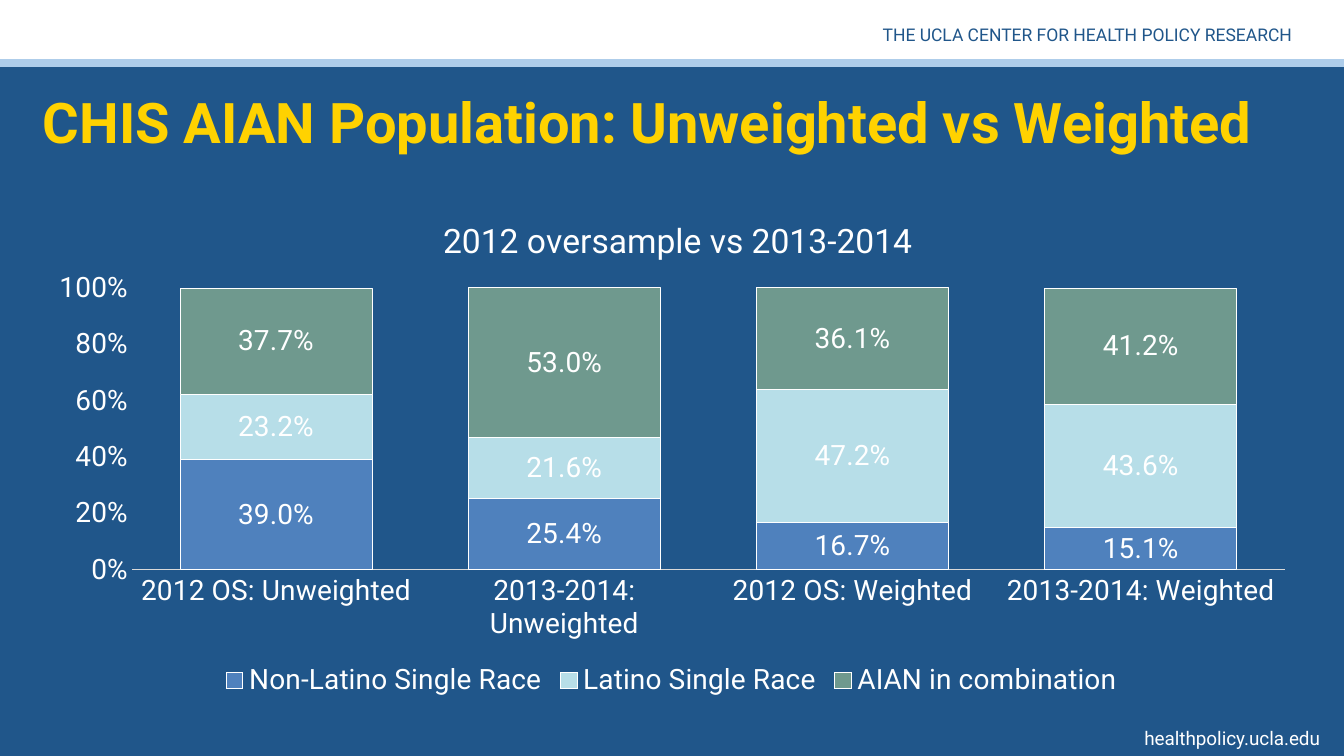
from lxml import etree
from pptx import Presentation
from pptx.chart.data import CategoryChartData
from pptx.dml.color import RGBColor
from pptx.enum.chart import XL_CHART_TYPE, XL_LABEL_POSITION, XL_LEGEND_POSITION, XL_TICK_MARK
from pptx.enum.shapes import MSO_CONNECTOR, MSO_SHAPE
from pptx.enum.text import MSO_ANCHOR, PP_ALIGN
from pptx.oxml.ns import qn
from pptx.util import Pt

NO_TICK = XL_TICK_MARK.NONE
LEFT, RIGHT = PP_ALIGN.LEFT, PP_ALIGN.RIGHT
TOP, MIDDLE = MSO_ANCHOR.TOP, MSO_ANCHOR.MIDDLE

HEADLINE = "CHIS AIAN Population: Unweighted vs Weighted"
CENTER_NAME = "THE UCLA CENTER FOR HEALTH POLICY RESEARCH"
WEBSITE = "healthpolicy.ucla.edu"
CHART_TITLE = "2012 oversample vs 2013-2014"
SURVEYS = ["2012 OS: Unweighted", "2013-2014: Unweighted",
           "2012 OS: Weighted", "2013-2014: Weighted"]
RACE_SHARES = {
    "Non-Latino Single Race": (0.39, 0.254, 0.167, 0.151),
    "Latino Single Race": (0.232, 0.216, 0.472, 0.436),
    "AIAN in combination": (0.377, 0.53, 0.361, 0.412),
}


class Theme:
    font = "Roboto"
    navy = RGBColor.from_string("20568A")
    white = RGBColor.from_string("FFFFFF")
    gold = RGBColor.from_string("FFD200")
    sky = RGBColor.from_string("AECDEA")
    axis = RGBColor.from_string("D9D9D9")
    races = [RGBColor.from_string(c) for c in ("4F81BD", "B7DEE8", "6F998E")]
    headline, chart_title, chart, website, center = 40, 24, 20, 13.5, 12.5
    rule, hairline = 6.27, 0.75


# Boxes in px: left, top, width, height
SLIDE_W, SLIDE_H = 1344, 756
BAND_H, RULE_Y = 67, 63
HEADLINE_BOX = (33, 58, 1277, 126)
CENTER_BOX = (748, 19, 554, 32)
WEBSITE_BOX = (1084, 722, 246, 34)
CHART_BOX = (33, 184, 1277, 519)
PLOT_BOX = (132, 288, 1153, 282)
CHART_TITLE_AT = (437, 212)


def px(length):
    return round(length * 914400 / 100.8)


def style_font(font, size, color, bold=False):
    font.name, font.size, font.bold = Theme.font, Pt(size), bold
    font.color.rgb = color


def add_text(slide, box, text, size, color, align, anchor=TOP, bold=False):
    frame = slide.shapes.add_textbox(*map(px, box)).text_frame
    frame.word_wrap = True
    frame.vertical_anchor = anchor
    frame.text = text
    line = frame.paragraphs[0]
    line.alignment = align
    style_font(line.runs[0].font, size, color, bold)


def place_in_chart(part, index, box, target=None):
    """Fix a chart part at a px position, stored as fractions of the chart."""
    for old in part.findall(qn("c:layout")):
        part.remove(old)
    layout = etree.Element(qn("c:layout"))
    manual = etree.SubElement(layout, qn("c:manualLayout"))
    left, top, width, height = CHART_BOX
    settings = [("layoutTarget", target)] if target else []
    settings += [("xMode", "edge"), ("yMode", "edge"),
                 ("x", (box[0] - left) / width), ("y", (box[1] - top) / height)]
    if len(box) == 4:
        settings += [("w", box[2] / width), ("h", box[3] / height)]
    for tag, value in settings:
        etree.SubElement(manual, qn("c:" + tag)).set("val", str(value))
    part.insert(index, layout)


def add_header(slide):
    band = slide.shapes.add_shape(MSO_SHAPE.RECTANGLE, 0, 0, px(SLIDE_W), px(BAND_H))
    band.shadow.inherit = False
    band.fill.solid()
    band.fill.fore_color.rgb = Theme.white
    band.line.fill.background()
    rule = slide.shapes.add_connector(
        MSO_CONNECTOR.STRAIGHT, 0, px(RULE_Y), px(SLIDE_W), px(RULE_Y))
    rule.line.color.rgb = Theme.sky
    rule.line.width = Pt(Theme.rule)
    etree.SubElement(rule.element.spPr, qn("a:effectLst"))


def add_shares_chart(slide):
    shares = CategoryChartData(number_format="0.0%")
    shares.categories = SURVEYS
    for race, values in RACE_SHARES.items():
        shares.add_series(race, values)
    chart = slide.shapes.add_chart(
        XL_CHART_TYPE.COLUMN_STACKED, *map(px, CHART_BOX), shares).chart
    style_font(chart.font, Theme.chart, Theme.white)

    chart.has_title = True
    heading = chart.chart_title.text_frame
    heading.text = CHART_TITLE
    style_font(heading.paragraphs[0].runs[0].font, Theme.chart_title, Theme.white)
    chart.has_legend = True
    chart.legend.position = XL_LEGEND_POSITION.BOTTOM
    chart.legend.include_in_layout = False
    style_font(chart.legend.font, Theme.chart, Theme.white)

    for axis in (chart.category_axis, chart.value_axis):
        axis.major_tick_mark = axis.minor_tick_mark = NO_TICK
        axis.has_major_gridlines = False
        style_font(axis.tick_labels.font, Theme.chart, Theme.white)
    chart.category_axis.format.line.color.rgb = Theme.axis
    chart.category_axis.format.line.width = Pt(Theme.hairline)
    percent = chart.value_axis
    percent.minimum_scale, percent.maximum_scale, percent.major_unit = 0, 1, 0.2
    percent.tick_labels.number_format = "0%"
    percent.tick_labels.number_format_is_linked = False
    percent.format.line.fill.background()

    columns = chart.plots[0]
    columns.gap_width, columns.overlap = 50, 100
    columns.vary_by_categories = False
    for race, color in zip(columns.series, Theme.races):
        race.format.fill.solid()
        race.format.fill.fore_color.rgb = color
        race.format.line.color.rgb = Theme.white
        race.format.line.width = Pt(Theme.hairline)
        labels = race.data_labels
        labels.show_value = True
        labels.number_format = "0.0%"
        labels.number_format_is_linked = False
        labels.position = XL_LABEL_POSITION.CENTER
        style_font(labels.font, Theme.chart, Theme.white)

    place_in_chart(chart.element.find(".//" + qn("c:plotArea")), 0, PLOT_BOX, "inner")
    place_in_chart(chart.element.find(".//" + qn("c:title")), 1, CHART_TITLE_AT)


def main():
    deck = Presentation()
    deck.slide_width, deck.slide_height = px(SLIDE_W), px(SLIDE_H)
    slide = deck.slides.add_slide(deck.slide_layouts[6])
    slide.background.fill.solid()
    slide.background.fill.fore_color.rgb = Theme.navy
    add_header(slide)
    add_text(slide, WEBSITE_BOX, WEBSITE, Theme.website, Theme.white, RIGHT)
    add_text(slide, CENTER_BOX, CENTER_NAME, Theme.center, Theme.navy, RIGHT)
    add_text(slide, HEADLINE_BOX, HEADLINE, Theme.headline, Theme.gold, LEFT, MIDDLE, True)
    add_shares_chart(slide)
    deck.save("out.pptx")


if __name__ == "__main__":
    main()
